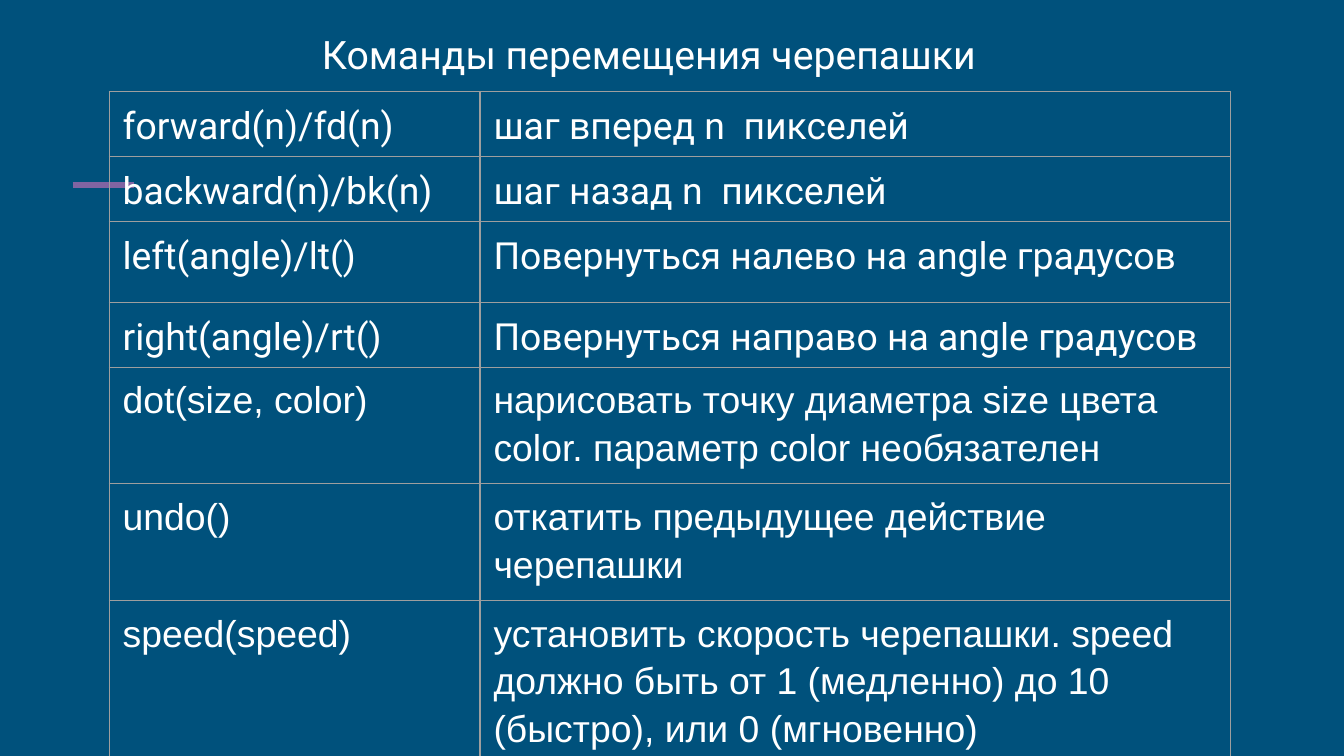
from lxml.etree import SubElement
from pptx import Presentation
from pptx.dml.color import RGBColor
from pptx.enum.shapes import MSO_CONNECTOR
from pptx.enum.text import MSO_ANCHOR, PP_ALIGN
from pptx.oxml.ns import qn
from pptx.util import Pt

COLORS = {
    "background": "00517C",
    "text": "FFFFFF",
    "accent": "8064A2",
    "border": "9E9E9E",
}
TITLE = "Команды перемещения черепашки "
COLUMN_WIDTHS = (198.7, 402.2)
COMMANDS = [
    (33.2, "Roboto", "forward(n)/fd(n)", "шаг вперед n  пикселей"),
    (33.2, "Roboto", "backward(n)/bk(n)", "шаг назад n  пикселей"),
    (43.2, "Roboto", "left(angle)/lt()", "Повернуться налево на angle градусов"),
    (33.2, "Roboto", "right(angle)/rt()", "Повернуться направо на angle градусов"),
    (59.8, "Arial", "dot(size, color)",
     "нарисовать точку диаметра size цвета color. параметр color необязателен"),
    (59.8, "Arial", "undo()", "откатить предыдущее действие черепашки"),
    (86.4, "Arial", "speed(speed)",
     "установить скорость черепашки. speed должно быть от 1 (медленно) "
     "до 10 (быстро), или 0 (мгновенно)"),
]


def color(name):
    """Return the named colour."""
    return RGBColor.from_string(COLORS[name])


def write(tf, text, font, size, align=PP_ALIGN.LEFT):
    """Fill a text frame with one styled paragraph."""
    tf.word_wrap = True
    p = tf.paragraphs[0]
    p.text = text
    p.alignment = align
    p.line_spacing = 1.15
    p.space_after = Pt(16)
    p.font.name = font
    p.font.size = Pt(size)
    p.font.color.rgb = color("text")


def add_accent(s):
    """Draw the short accent line at the left edge."""
    line = s.shapes.add_connector(
        MSO_CONNECTOR.STRAIGHT, Pt(38.9), Pt(99.2), Pt(72), Pt(99.2))
    line.line.color.rgb = color("accent")
    line.line.width = Pt(3)
    SubElement(line._element.spPr, qn("a:effectLst"))


def add_title(s):
    """Add the centred heading."""
    sp = s.shapes.add_textbox(Pt(20.9), Pt(0.7), Pt(658.8), Pt(48.2))
    tf = sp.text_frame
    tf.margin_left = tf.margin_right = tf.margin_top = tf.margin_bottom = Pt(7.2)
    tf.vertical_anchor = MSO_ANCHOR.BOTTOM
    write(tf, TITLE, "Roboto", 21, PP_ALIGN.CENTER)


def set_borders(cell):
    """Outline a cell on all four sides."""
    tc_pr = cell._tc.get_or_add_tcPr()
    for i, side in enumerate(("a:lnL", "a:lnR", "a:lnT", "a:lnB")):
        ln = tc_pr.makeelement(qn(side), {"w": str(Pt(0.75))})
        fill = SubElement(ln, qn("a:solidFill"))
        SubElement(fill, qn("a:srgbClr"), val=COLORS["border"])
        tc_pr.insert(i, ln)


def add_commands(s):
    """Add the table of turtle commands."""
    frame = s.shapes.add_table(
        len(COMMANDS), len(COLUMN_WIDTHS), Pt(58.5), Pt(49),
        Pt(sum(COLUMN_WIDTHS)), Pt(sum(row[0] for row in COMMANDS)))
    table = frame.table
    table.first_row = table.horz_banding = False
    for column, width in zip(table.columns, COLUMN_WIDTHS):
        column.width = Pt(width)
    for row, (height, font, *texts) in zip(table.rows, COMMANDS):
        row.height = Pt(height)
        for cell, text in zip(row.cells, texts):
            cell.fill.background()
            cell.margin_left = cell.margin_right = Pt(7.2)
            cell.margin_top = cell.margin_bottom = Pt(3.6)
            set_borders(cell)
            write(cell.text_frame, text, font, 20)


def main():
    """Build and save the slide."""
    prs = Presentation()
    prs.slide_width, prs.slide_height = Pt(720), Pt(405)
    s = prs.slides.add_slide(prs.slide_layouts[6])
    s.background.fill.solid()
    s.background.fill.fore_color.rgb = color("background")
    add_accent(s)
    add_title(s)
    add_commands(s)
    prs.save("out.pptx")


if __name__ == "__main__":
    main()
